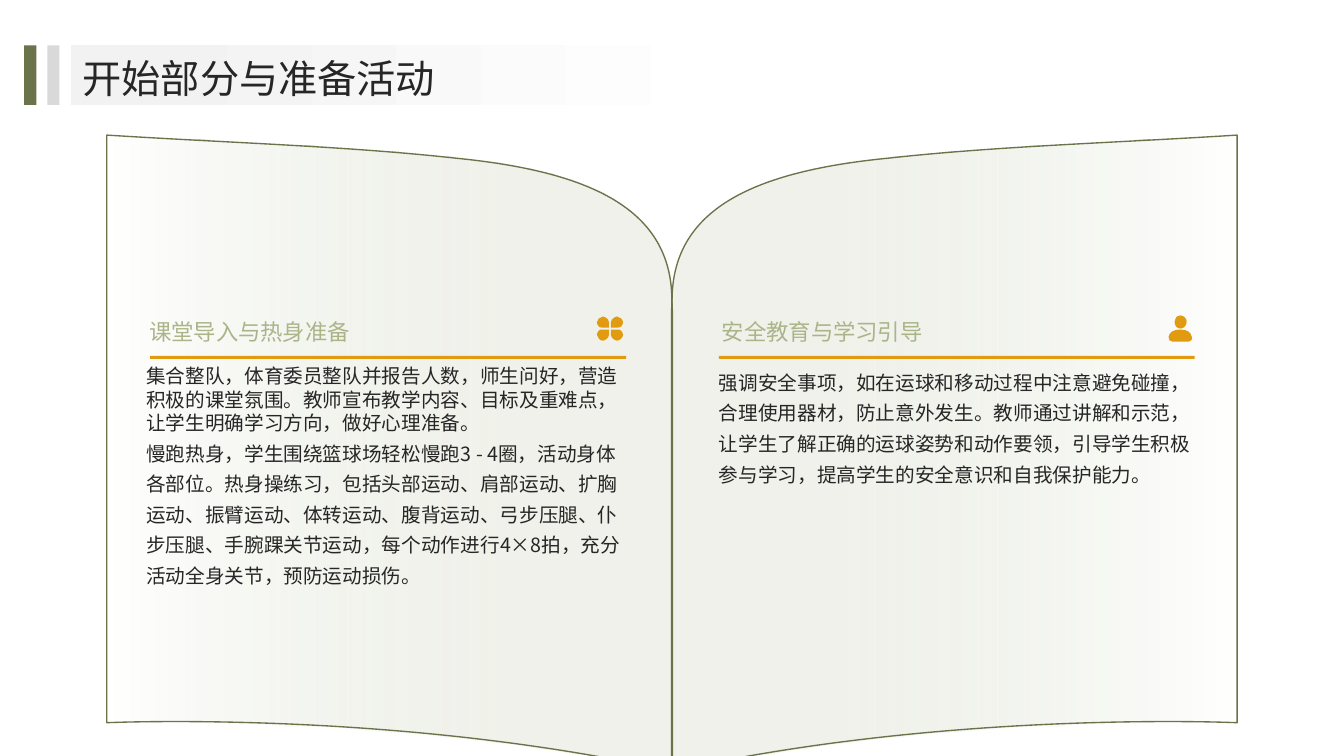
from lxml import etree
from pptx import Presentation, util as u
from pptx.dml import color
from pptx.enum import shapes, text
from pptx.oxml import ns

FONT = "Noto Sans CJK SC"
OLIVE, ORANGE, INK = "6A7349", "E19B10", "262626"
HEADING_STOPS = [(0, "ABB489"), (0.69, OLIVE)]
SLIDE_W = 13.33

RIGHT_PAGE = [(6.67, 7.65), (6.67, 3.1), (6.6, 2.12, 7.39, 1.71, 8.8, 1.57),
              (9.89, 1.45, 11, 1.42, 12.27, 1.34),
              (12.27, 3.23, 12.27, 6.72, 12.27, 6.72), (12.27, 7.17),
              (12.27, 7.17, 9.41, 7.04, 6.67, 7.65)]
PETAL = [(0.02, 0.01), (0.07, 0.01), (0.09, 0.01, 0.1, 0.01, 0.11, 0.02),
         (0.12, 0.03, 0.13, 0.05, 0.13, 0.06), (0.13, 0.08, 0.12, 0.09, 0.11, 0.1),
         (0.1, 0.11, 0.09, 0.12, 0.07, 0.12), (0.06, 0.12, 0.04, 0.11, 0.03, 0.1),
         (0.02, 0.09, 0.01, 0.08, 0.01, 0.06), (0.01, 0.01),
         (0.01, 0.01, 0.02, 0.01, 0.02, 0.01)]
PERSON = [
    [(11.71, 3.27), (11.78, 3.27, 11.81, 3.3, 11.82, 3.34),
     (11.83, 3.37, 11.81, 3.39, 11.79, 3.39), (11.63, 3.39),
     (11.6, 3.39, 11.59, 3.37, 11.59, 3.34), (11.6, 3.3, 11.63, 3.27, 11.71, 3.27)],
    [(11.71, 3.13), (11.74, 3.13, 11.77, 3.16, 11.77, 3.19),
     (11.77, 3.23, 11.74, 3.26, 11.71, 3.26), (11.67, 3.26, 11.65, 3.23, 11.65, 3.19),
     (11.65, 3.16, 11.67, 3.13, 11.71, 3.13)],
]
WARM_UP = [
    ("集合整队，体育委员整队并报告人数，师生问好，营造积极的课堂氛围。"
     "教师宣布教学内容、目标及重难点，让学生明确学习方向，做好心理准备。", u.Pt(16.8)),
    ("慢跑热身，学生围绕篮球场轻松慢跑3 - 4圈，活动身体各部位。"
     "热身操练习，包括头部运动、肩部运动、扩胸运动、振臂运动、体转运动、腹背运动、"
     "弓步压腿、仆步压腿、手腕踝关节运动，每个动作进行4×8拍，"
     "充分活动全身关节，预防运动损伤。", u.Pt(21.8)),
]
SAFETY = [
    ("强调安全事项，如在运球和移动过程中注意避免碰撞，合理使用器材，防止意外发生。"
     "教师通过讲解和示范，让学生了解正确的运球姿势和动作要领，"
     "引导学生积极参与学习，提高学生的安全意识和自我保护能力。", u.Pt(21.8)),
]


def rgb(value):
    """Turn a hex string into a colour."""
    return color.RGBColor.from_string(value)


def paint(fill, colours, angle=0):
    """Fill with one colour or with a list of two gradient stops."""
    if isinstance(colours, str):
        fill.solid()
        fill.fore_color.rgb = rgb(colours)
        return
    fill.gradient()
    fill.gradient_angle = angle
    for stop, (position, value) in zip(fill.gradient_stops, colours):
        stop.position = position
        stop.color.rgb = rgb(value)


def place(contour, x, y, sx, sy):
    """Scale a contour by sx and sy and move it to x, y."""
    return [tuple(y + sy * v if i % 2 else x + sx * v for i, v in enumerate(segment))
            for segment in contour]


def finish(sp, colours, angle=0, line=None):
    """Set fill and line and drop the shadow."""
    sp.shadow.inherit = False
    paint(sp.fill, colours, angle)
    if line:
        paint(sp.line.fill, line)
        sp.line.width = u.Pt(0.95)
    else:
        sp.line.fill.background()


def bend(sp, segments):
    """Turn the lines that have control points into Bezier curves."""
    for node, segment in zip(sp.element.xpath(".//a:lnTo"), segments):
        if len(segment) == 6:
            node.tag = ns.qn("a:cubicBezTo")
            for i in (0, 1):
                pt = etree.Element(ns.qn("a:pt"))
                pt.set("x", str(u.Inches(segment[2 * i]) - sp.left))
                pt.set("y", str(u.Inches(segment[2 * i + 1]) - sp.top))
                node.insert(i, pt)


def add_outline(s, contours, colours, angle=0, line=None):
    """Draw closed outlines of lines and curves as one freeform."""
    builder = s.shapes.build_freeform(*map(u.Inches, contours[0][0]))
    for i, contour in enumerate(contours):
        if i:
            builder.move_to(*map(u.Inches, contour[0]))
        ends = [tuple(map(u.Inches, segment[-2:])) for segment in contour[1:]]
        builder.add_line_segments(ends, close=True)
    sp = builder.convert_to_shape()
    segments = [segment for contour in contours for segment in contour[1:]]
    bend(sp, segments)
    finish(sp, colours, angle, line)
    return sp


def add_page(s, contour, angle):
    """Draw one page of the open book, half clear toward the spine."""
    sp = add_outline(s, [contour], [(0, "FFFFFF"), (0.69, "E3E6D8")], angle, OLIVE)
    inner = sp.element.xpath(".//a:gs/a:srgbClr")[1]
    etree.SubElement(inner, ns.qn("a:alpha")).set("val", "50000")


def add_rect(s, x, y, w, h, colours):
    """Draw a rectangle without a line."""
    sp = s.shapes.add_shape(shapes.MSO_SHAPE.RECTANGLE, *map(u.Inches, (x, y, w, h)))
    finish(sp, colours)


def write(tf, paragraphs, size, colours, anchor, inset=True):
    """Write (text, line spacing) paragraphs into a text frame."""
    tf.word_wrap = True
    tf.auto_size = text.MSO_AUTO_SIZE.NONE
    tf.vertical_anchor = anchor
    if not inset:
        tf.margin_left = tf.margin_right = tf.margin_top = tf.margin_bottom = 0
    for i, (words, spacing) in enumerate(paragraphs):
        p = tf.add_paragraph() if i else tf.paragraphs[0]
        p.alignment = text.PP_ALIGN.LEFT
        p.line_spacing = spacing
        p.space_before = p.space_after = u.Pt(0)
        r = p.add_run()
        r.text = words
        r.font.size = u.Pt(size)
        paint(r.font.fill, colours, 135)
        r.font.name = FONT
        ea = etree.SubElement(r.font._element, ns.qn("a:ea"))
        ea.set("typeface", FONT)


def add_text(s, x, y, w, h, *args, **kwargs):
    """Add a text box."""
    sp = s.shapes.add_textbox(*map(u.Inches, (x, y, w, h)))
    write(sp.text_frame, *args, **kwargs)


def add_section(s, heading_x, heading_w, body_x, rule_x, heading, body):
    """Add a heading, the rule below it and the body text."""
    add_text(s, heading_x, 2.78, heading_w, 0.69, [(heading, 1.1)], 16, HEADING_STOPS,
             text.MSO_ANCHOR.BOTTOM)
    add_text(s, body_x, 3.61, 4.79, 3.02, body, 14, INK, text.MSO_ANCHOR.TOP, inset=False)
    add_rect(s, rule_x, 3.53, 4.72, 0.03, ORANGE)


def add_title(s, words):
    """Add the title with its band and two bars."""
    add_rect(s, 0.7, 0.45, 7.09, 0.59, [(0.1, "F2F2F2"), (0.93, "FFFFFF")])
    for x, value in ((0.24, OLIVE), (0.47, "D9D9D9")):
        add_rect(s, x, 0.45, 0.12, 0.59, value)
    title = s.shapes.title
    title.left, title.top, title.width, title.height = map(u.Inches, (0.82, 0.49, 11.78, 0.51))
    write(title.text_frame, [(words, 1.1)], 28, INK, text.MSO_ANCHOR.MIDDLE, inset=False)
    title.element.getparent().append(title.element)


def main():
    """Build the slide."""
    prs = Presentation()
    prs.slide_width, prs.slide_height = u.Inches(SLIDE_W), u.Inches(7.5)
    s = prs.slides.add_slide(prs.slide_layouts[5])
    add_page(s, RIGHT_PAGE, 180)
    add_page(s, place(RIGHT_PAGE, SLIDE_W, 0, -1, 1), 0)
    add_section(s, 1.38, 3.15, 1.45, 1.49, "课堂导入与热身准备", WARM_UP)
    add_section(s, 7.06, 3.82, 7.13, 7.13, "安全教育与学习引导", SAFETY)
    clover = [place(PETAL, 6.05, 3.26, sx, sy) for sx in (1, -1) for sy in (1, -1)]
    add_outline(s, clover, ORANGE)
    add_outline(s, PERSON, ORANGE)
    add_title(s, "开始部分与准备活动")
    prs.save("out.pptx")


if __name__ == "__main__":
    main()
